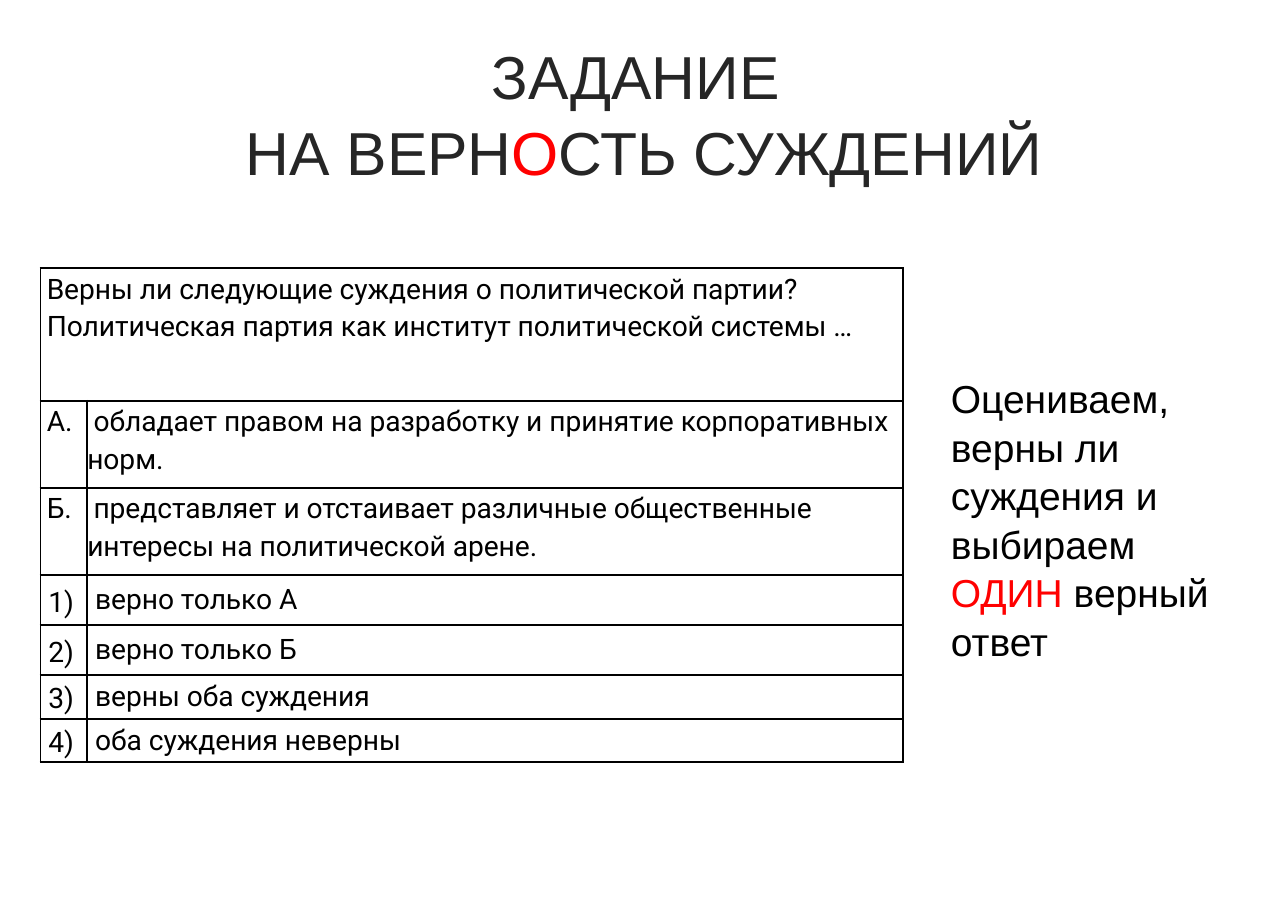
from lxml import etree
from pptx import Presentation
from pptx.dml.color import RGBColor
from pptx.enum.text import MSO_ANCHOR, PP_ALIGN
from pptx.oxml.ns import qn
from pptx.util import Inches, Pt

BLACK = RGBColor(0x00, 0x00, 0x00)
CHARCOAL = RGBColor(0x26, 0x26, 0x26)
RED = RGBColor(0xFF, 0x00, 0x00)
LEFT, CENTER = PP_ALIGN.LEFT, PP_ALIGN.CENTER
TOP, MIDDLE = MSO_ANCHOR.TOP, MSO_ANCHOR.MIDDLE

COLUMN_WIDTHS = [0.3, 5.23]
ROW_HEIGHTS = [0.85, 0.56, 0.56, 0.32, 0.32, 0.28, 0.28]
QUESTION = [
    "Верны ли следующие суждения о политической партии?",
    "Политическая партия как институт политической системы …",
]
STATEMENTS = [
    ("А.", "обладает правом на разработку и принятие корпоративных норм."),
    ("Б.", "представляет и отстаивает различные общественные интересы на политической арене."),
]
ANSWERS = ["верно только А", "верно только Б", "верны оба суждения", "оба суждения неверны"]


class TaskSlide:
    """Draws text boxes and ruled tables on one slide in a shared style."""

    heading_font = "Arial"
    table_font = "Roboto"
    table_size = 13
    border_width = 1
    first_indent = 0.04
    table_spacing = 1.15

    def __init__(self, slide):
        self.slide = slide

    def apply(self, target, formats):
        for name, value in formats.items():
            setattr(target, name, value)

    def run(self, paragraph, text, font, size, color):
        run = paragraph.add_run()
        run.text = text
        self.apply(run.font, {"name": font, "size": Pt(size)})
        run.font.color.rgb = color

    def text(self, box, paragraphs, size, align, top_inset):
        frame = self.slide.shapes.add_textbox(*map(Inches, box)).text_frame
        self.apply(frame, {
            "word_wrap": True,
            "vertical_anchor": TOP,
            "margin_top": Inches(top_inset),
        })
        for index, runs in enumerate(paragraphs):
            paragraph = frame.add_paragraph() if index else frame.paragraphs[0]
            self.apply(paragraph, {"alignment": align, "line_spacing": 1.04})
            for text, color in runs:
                self.run(paragraph, text, self.heading_font, size, color)

    def table(self, left, top, widths, heights):
        frame = self.slide.shapes.add_table(
            len(heights), len(widths), Inches(left), Inches(top),
            Inches(sum(widths)), Inches(sum(heights)))
        table = frame.table
        self.apply(table, {"first_row": False, "horz_banding": False})
        for column, width in zip(table.columns, widths):
            column.width = Inches(width)
        for row, height in zip(table.rows, heights):
            row.height = Inches(height)
            for cell in row.cells:
                self.border(cell)
        return table

    def border(self, cell):
        properties = cell._tc.get_or_add_tcPr()
        for side in ("lnL", "lnR", "lnT", "lnB"):
            line = etree.SubElement(properties, qn(f"a:{side}"), w=str(Pt(self.border_width)))
            fill = etree.SubElement(line, qn("a:solidFill"))
            etree.SubElement(fill, qn("a:srgbClr"), val=str(BLACK))
        cell.fill.background()

    def cell(self, cell, lines, inset=0, anchor=TOP, spacing=table_spacing):
        margins = ("margin_left", "margin_right", "margin_top", "margin_bottom")
        self.apply(cell, {name: Inches(inset) for name in margins})
        cell.vertical_anchor = anchor
        for index, text in enumerate(lines):
            frame = cell.text_frame
            paragraph = frame.add_paragraph() if index else frame.paragraphs[0]
            self.apply(paragraph, {"alignment": LEFT, "line_spacing": spacing})
            indent = paragraph._p.get_or_add_pPr()
            indent.set("marL", "0")
            indent.set("indent", str(Inches(self.first_indent)))
            self.run(paragraph, text, self.table_font, self.table_size, BLACK)


def main():
    deck = Presentation()
    deck.slide_width, deck.slide_height = Inches(8.26), Inches(5.83)
    task = TaskSlide(deck.slides.add_slide(deck.slide_layouts[6]))

    task.text((0, 0.15, 8.26, 1.04), [
        [("ЗАДАНИЕ ", CHARCOAL)],
        [("НА ВЕРН", CHARCOAL), ("О", RED), ("СТЬ СУЖДЕНИЙ", CHARCOAL)],
    ], size=28, align=CENTER, top_inset=0.08)

    task.text((6, 2.04, 2.16, 2.83), [
        [("Оцениваем, верны ли суждения и выбираем ", BLACK),
         ("ОДИН ", RED), ("верный ответ", BLACK)],
    ], size=18, align=LEFT, top_inset=0.35)

    quiz = task.table(0.26, 1.72, COLUMN_WIDTHS, ROW_HEIGHTS)
    quiz.cell(0, 0).merge(quiz.cell(0, 1))
    task.cell(quiz.cell(0, 0), QUESTION)
    for row, (letter, statement) in enumerate(STATEMENTS, start=1):
        task.cell(quiz.cell(row, 0), [letter])
        task.cell(quiz.cell(row, 1), [statement])
    for number, answer in enumerate(ANSWERS, start=1):
        row = len(STATEMENTS) + number
        task.cell(quiz.cell(row, 0), [f"{number})"], inset=0.01, anchor=MIDDLE)
        task.cell(quiz.cell(row, 1), [answer], inset=0.01, anchor=MIDDLE, spacing=1.0)

    deck.save("out.pptx")


if __name__ == "__main__":
    main()
